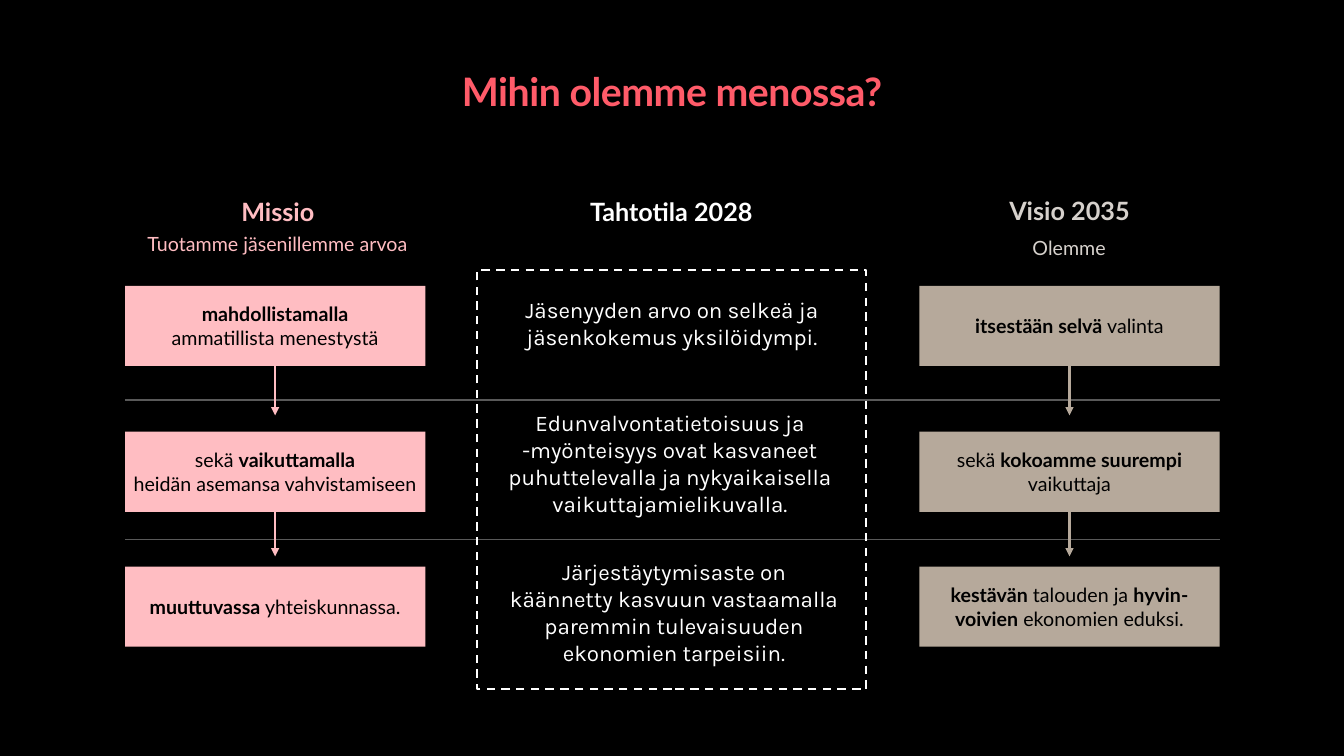
from lxml import etree
from pptx import Presentation
from pptx import util as u
from pptx.dml.color import RGBColor
from pptx.enum import dml, shapes, text
from pptx.oxml.ns import qn

BLACK, WHITE, GREY = "000000", "FFFFFF", "595959"
CORAL, PINK, SAND, PALE_SAND = "FF5B69", "FFBDC2", "B6A99B", "D6D1CC"


def colour(hex_string):
    return RGBColor.from_string(hex_string)


class Board:
    """Style and current slide; lengths are percentages of the slide's size."""

    heading_font, statement_font = "Lato", "Karla"

    def __init__(self, presentation):
        self.column = presentation.slide_width / 100
        self.row = presentation.slide_height / 100
        self.slide = presentation.slides.add_slide(presentation.slide_layouts[5])
        self.slide.background.fill.solid()
        self.slide.background.fill.fore_color.rgb = colour(BLACK)

    def area(self, left, top, width, height):
        return (u.Emu(round(left * self.column)), u.Emu(round(top * self.row)),
                u.Emu(round(width * self.column)), u.Emu(round(height * self.row)))

    def set_text(self, shape, content, size, hex_string, font=heading_font, margin=0, spacing=None):
        """Fill a shape with centred text; asterisks enclose bold words."""
        frame = shape.text_frame
        frame.word_wrap = True
        frame.auto_size = text.MSO_AUTO_SIZE.NONE
        frame.vertical_anchor = text.MSO_ANCHOR.MIDDLE
        frame.margin_left = frame.margin_right = u.Inches(margin)
        frame.margin_top = frame.margin_bottom = u.Inches(margin)
        paragraph = frame.paragraphs[0]
        paragraph.alignment = text.PP_ALIGN.CENTER
        paragraph.line_spacing = 1.0
        paragraph.space_before = u.Pt(0)
        for number, line in enumerate(content.split("\n")):
            if number:
                paragraph.add_line_break()
            for part, words in enumerate(line.split("*")):
                if not words:
                    continue
                run = paragraph.add_run()
                run.text = words
                run.font.name = font
                run.font.size = u.Pt(size)
                run.font.bold = part % 2 == 1
                run.font.color.rgb = colour(hex_string)
                if spacing:
                    run.font._element.set("spc", str(spacing))

    def title(self, area, content):
        title = self.slide.shapes.title
        title.left, title.top, title.width, title.height = self.area(*area)
        self.set_text(title, f"*{content}*", 28, CORAL, spacing=-30)

    def label(self, area, content, size, hex_string, font=heading_font):
        box = self.slide.shapes.add_textbox(*self.area(*area))
        self.set_text(box, content, size, hex_string, font)

    def rectangle(self, area):
        shape = self.slide.shapes.add_shape(shapes.MSO_SHAPE.RECTANGLE, *self.area(*area))
        shape.shadow.inherit = False
        return shape

    def card(self, area, content, fill):
        shape = self.rectangle(area)
        shape.fill.solid()
        shape.fill.fore_color.rgb = colour(fill)
        shape.line.fill.background()
        self.set_text(shape, content, 14, BLACK, margin=0.04)
        return shape

    def dashed_frame(self, area):
        shape = self.rectangle(area)
        shape.fill.background()
        shape.line.color.rgb = colour(WHITE)
        shape.line.width = u.Pt(1.5)
        shape.line.dash_style = dml.MSO_LINE.DASH

    def line(self, left, top, right, bottom, hex_string, weight):
        start_x, start_y, end_x, end_y = self.area(left, top, right, bottom)
        connector = self.slide.shapes.add_connector(
            shapes.MSO_CONNECTOR.STRAIGHT, start_x, start_y, end_x, end_y)
        connector.line.color.rgb = colour(hex_string)
        connector.line.width = u.Pt(weight)
        etree.SubElement(connector._element.spPr, qn("a:effectLst"))
        return connector

    def arrow(self, card, middle, top, bottom, hex_string):
        connector = self.line(middle, top, middle, bottom, hex_string, 1.5)
        connector.begin_connect(card, 2)
        outline = connector.line._get_or_add_ln()
        etree.SubElement(outline, qn("a:tailEnd"), type="triangle")


def main():
    presentation = Presentation()
    presentation.slide_width, presentation.slide_height = u.Inches(13.33), u.Inches(7.5)
    board = Board(presentation)
    board.title((0, 8.8, 100, 6.4), "Mihin olemme menossa?")

    # Lines between the rows
    mission_left, vision_left, card_width, card_height = 9.3, 68.4, 22.35, 10.6
    for top in (52.9, 71.35):
        board.line(mission_left, top, vision_left + card_width, top, GREY, 1)

    # Mission and vision cards, with arrows down the column
    card_tops, arrow_ends = (37.8, 57.1, 74.95), (54.95, 73.6)
    columns = (
        (mission_left, PINK, (
            "*mahdollistamalla*\nammatillista menestystä",
            "sekä *vaikuttamalla*\nheidän asemansa vahvistamiseen",
            "*muuttuvassa* yhteiskunnassa.")),
        (vision_left, SAND, (
            "*itsestään selvä* valinta",
            "sekä *kokoamme suurempi* vaikuttaja",
            "*kestävän* talouden ja *hyvin-voivien* ekonomien eduksi.")),
    )
    for left, fill, contents in columns:
        cards = [board.card((left, top, card_width, card_height), content, fill)
                 for top, content in zip(card_tops, contents)]
        for card, top, end in zip(cards, card_tops, arrow_ends):
            board.arrow(card, left + card_width / 2, top + card_height, end, fill)

    # Column headings and lead-ins
    for left, top, width, content, hex_string in (
            (12, 25.35, 17.35, "Missio", PINK),
            (37.65, 25.35, 24.6, "Tahtotila 2028", WHITE),
            (vision_left, 25.2, card_width, "Visio 2035", PALE_SAND)):
        board.label((left, top, width, 5.35), f"*{content}*", 18, hex_string)
    board.label((5.1, 30.65, 31.1, 3.2), "Tuotamme jäsenillemme arvoa", 14, PINK)
    board.label((63.2, 31.2, 32.7, 3.2), "Olemme", 14, PALE_SAND)

    # Target state in the dashed frame
    board.dashed_frame((35.5, 35.7, 28.95, 55.5))
    statement_height = 16
    for left, middle, width, content in (
            (38.6, 42.7, 22.8, "Jäsenyyden arvo on selkeä ja jäsenkokemus yksilöidympi."),
            (37.3, 61.25, 25.1, "Edunvalvontatietoisuus ja -myönteisyys ovat kasvaneet "
             "puhuttelevalla ja nykyaikaisella vaikuttajamielikuvalla."),
            (37.85, 80.95, 24.6, "Järjestäytymisaste on käännetty kasvuun vastaamalla "
             "paremmin tulevaisuuden ekonomien tarpeisiin.")):
        board.label((left, middle - statement_height / 2, width, statement_height),
                    content, 16, WHITE, board.statement_font)

    presentation.save("out.pptx")


if __name__ == "__main__":
    main()
